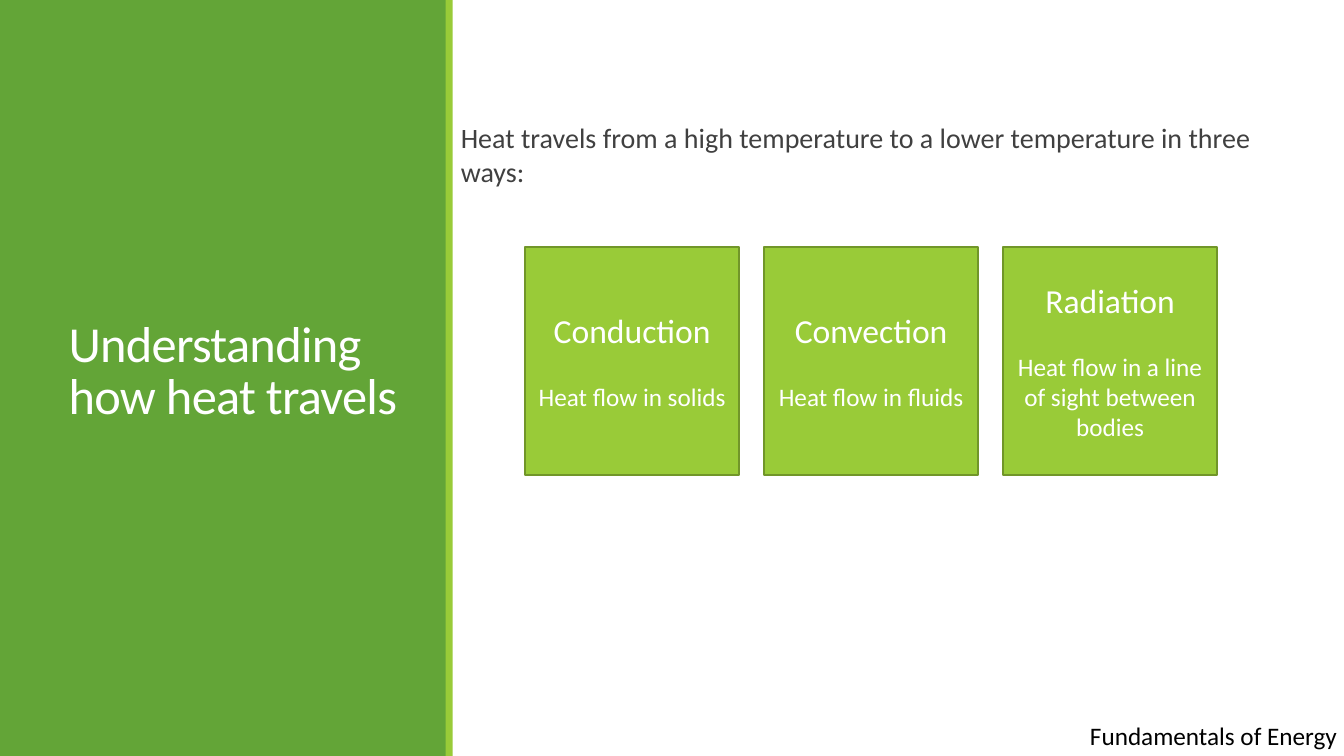
from dataclasses import dataclass

from pptx import Presentation
from pptx.dml.color import RGBColor
from pptx.enum.shapes import MSO_SHAPE as Shape
from pptx.enum.text import MSO_ANCHOR as Anchor, MSO_AUTO_SIZE as AutoSize, PP_ALIGN as Align
from pptx.util import Inches, Pt


@dataclass(frozen=True)
class Theme:
    """Colours, type sizes and font of the slide."""
    font: str = "Calibri"
    panel: str = "63A537"
    accent: str = "99CB38"
    outline: str = "719629"
    light: str = "FFFFFF"
    body: str = "404040"
    dark: str = "000000"
    title_size: int = 36
    heading_size: int = 24
    body_size: int = 20
    small_size: int = 18
    outline_width: float = 1.25


THEME = Theme()
WIDTH, HEIGHT = 13.33, 7.5
CARDS = [
    ("Conduction", "Heat flow in solids"),
    ("Convection", "Heat flow in fluids"),
    ("Radiation", "Heat flow in a line of sight between bodies"),
]


def add_text(paragraph, text, size, color, align=Align.LEFT):
    """Append one formatted run to a paragraph and return the run."""
    paragraph.alignment = align
    run = paragraph.add_run()
    run.text = text
    run.font.name = THEME.font
    run.font.size = Pt(size)
    run.font.color.rgb = RGBColor.from_string(color)
    return run


def add_rectangle(slide, box, fill, outline=None):
    """Draw a flat rectangle, outlined when a line colour is given."""
    shape = slide.shapes.add_shape(Shape.RECTANGLE, *map(Inches, box))
    shape.shadow.inherit = False
    shape.fill.solid()
    shape.fill.fore_color.rgb = RGBColor.from_string(fill)
    if outline:
        shape.line.color.rgb = RGBColor.from_string(outline)
        shape.line.width = Pt(THEME.outline_width)
    else:
        shape.line.fill.background()
    return shape


def add_text_box(slide, box, text, size, color, align=Align.LEFT):
    """Place a wrapping text box holding one paragraph."""
    frame = slide.shapes.add_textbox(*map(Inches, box)).text_frame
    frame.word_wrap = True
    add_text(frame.paragraphs[0], text, size, color, align)
    return frame


def add_title_panel(slide, box, text):
    """Fill the side panel with its accent stripe and the slide title."""
    left, top, width, height = box
    add_rectangle(slide, box, THEME.panel)
    add_rectangle(slide, (left + width - 0.01, top, 0.07, height), THEME.accent)
    title = slide.shapes.title
    title.left, title.top = Inches(left + 0.58), Inches(top + 1.76)
    title.width, title.height = Inches(3.5), Inches(height / 3)
    slide.shapes.element.append(title.element)
    frame = title.text_frame
    frame.auto_size = AutoSize.NONE
    frame.word_wrap = True
    frame.vertical_anchor = Anchor.BOTTOM
    paragraph = frame.paragraphs[0]
    paragraph.line_spacing = 0.85
    run = add_text(paragraph, text, THEME.title_size, THEME.light)
    run.font._element.set("spc", "-50")


def add_card(slide, box, heading, detail):
    """Draw one card with a heading above its explanation."""
    frame = add_rectangle(slide, box, THEME.accent, THEME.outline).text_frame
    frame.word_wrap = True
    frame.vertical_anchor = Anchor.MIDDLE
    add_text(frame.paragraphs[0], heading, THEME.heading_size, THEME.light, Align.CENTER)
    paragraph = frame.add_paragraph()
    paragraph.space_before = Pt(22)
    add_text(paragraph, detail, THEME.small_size, THEME.light, Align.CENTER)


def add_card_row(slide, box, cards, gap):
    """Share the width of the box equally among the cards."""
    left, top, width, height = box
    card_width = (width - gap * (len(cards) - 1)) / len(cards)
    for column, (heading, detail) in enumerate(cards):
        card_left = left + column * (card_width + gap)
        add_card(slide, (card_left, top, card_width, height), heading, detail)


def add_content(slide, box):
    """Place the introduction, the cards and the footer in the content area."""
    left, top, width, height = box
    introduction = add_text_box(
        slide, (left + 0.14, top + 1.15, 8.21, 1.22),
        "Heat travels from a high temperature to a lower temperature in three ways:",
        THEME.body_size, THEME.body)
    introduction.margin_left = introduction.margin_right = 0
    add_card_row(slide, (left + 0.78, top + 2.45, 6.86, 2.26), CARDS, 0.25)
    add_text_box(slide, (left + 1.3, top + height - 0.4, width - 1.27, 0.4),
                 "Fundamentals of Energy", THEME.small_size, THEME.dark, Align.RIGHT)


def main():
    """Build the slide and save it."""
    presentation = Presentation()
    presentation.slide_width, presentation.slide_height = Inches(WIDTH), Inches(HEIGHT)
    slide = presentation.slides.add_slide(presentation.slide_layouts[5])
    panel_width = 4.43
    add_title_panel(slide, (0, 0, panel_width, HEIGHT), "Understanding how heat travels")
    add_content(slide, (panel_width, 0, WIDTH - panel_width, HEIGHT))
    presentation.save("out.pptx")


if __name__ == "__main__":
    main()
